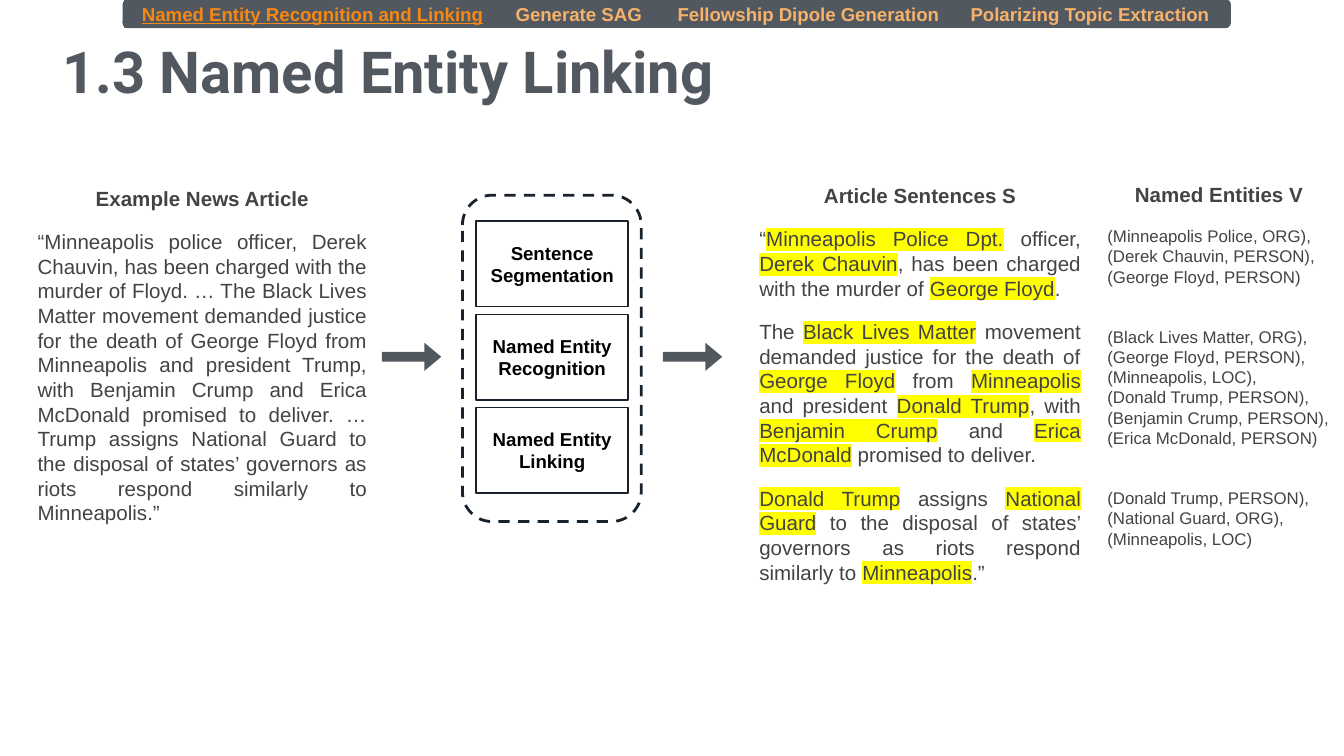
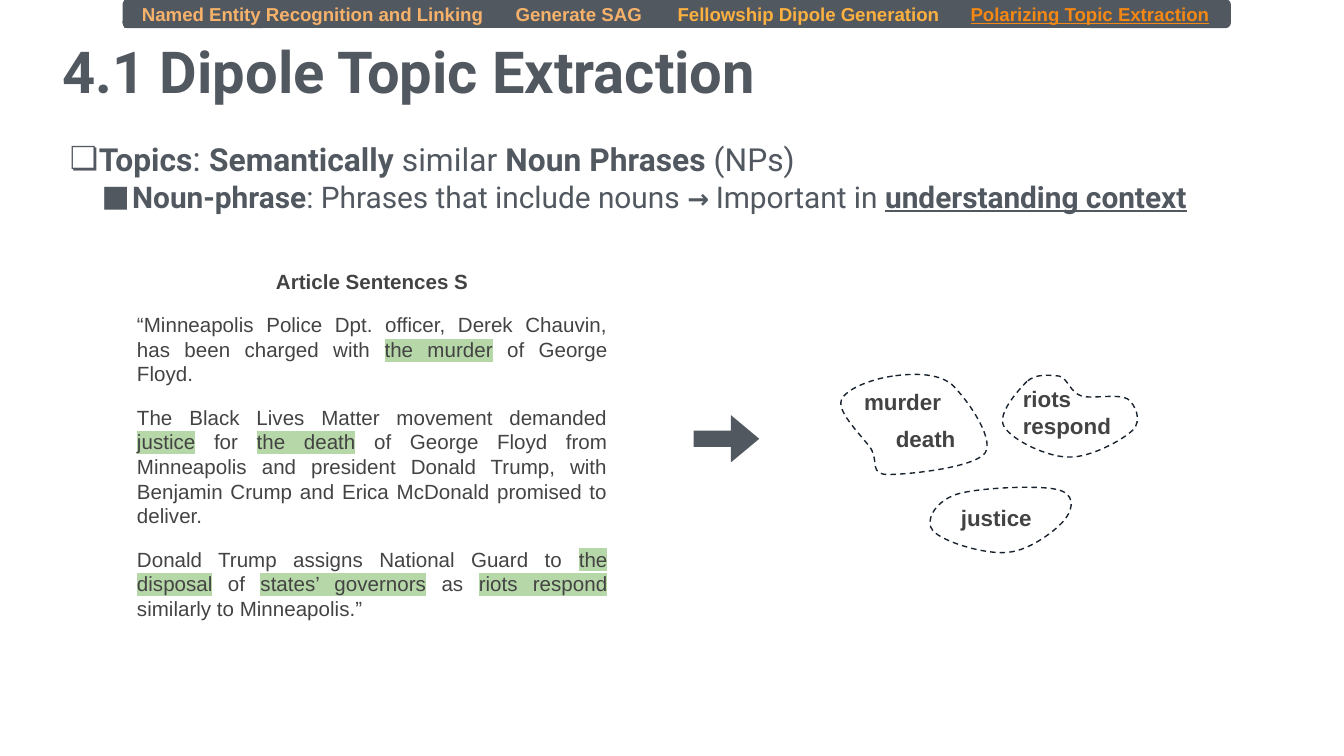
from dataclasses import dataclass
from typing import NamedTuple, Optional

from lxml.etree import SubElement
from pptx import Presentation
from pptx.dml.color import RGBColor
from pptx.enum.dml import MSO_LINE
from pptx.enum.shapes import MSO_SHAPE as Preset
from pptx.enum.text import MSO_ANCHOR as Anchor, PP_ALIGN as Align
from pptx.oxml.ns import qn
from pptx.util import Cm, Pt


@dataclass(frozen=True)
class Theme:
    slate: str = "525860"
    outline: str = "18222D"
    body: str = "434343"
    black: str = "000000"
    tab: str = "F6B26B"
    tab_done: str = "FCB040"
    tab_active: str = "F58813"
    entity_mark: str = "FFFF00"
    phrase_mark: str = "B6D7A8"
    title_font: str = "Roboto"
    text_font: str = "Arial"
    title_size: int = 31
    topic_size: int = 17
    phrase_size: int = 16
    word_size: int = 12
    text_size: int = 11
    label_size: int = 10
    entity_size: int = 9


THEME = Theme()


class Box(NamedTuple):
    """Left, top, width and height in centimetres."""
    left: float
    top: float
    width: float
    height: float

    def emu(self) -> tuple:
        return tuple(Cm(value) for value in self)


class Run(NamedTuple):
    text: str
    size: float = THEME.text_size
    color: str = THEME.body
    bold: bool = False
    underline: bool = False
    mark: Optional[str] = None
    font: str = THEME.text_font


class Bullet(NamedTuple):
    char: str
    margin: float
    hanging: float
    level: int


class Para(NamedTuple):
    runs: list
    align: Align = Align.LEFT
    before: float = 0
    after: float = 0
    bullet: Optional[Bullet] = None


class Word(NamedTuple):
    text: str
    box: Box


TABS = (
    ("Named Entity Recognition and Linking", 7.09),
    ("Generate SAG ", 3.07),
    ("Fellowship Dipole Generation", 5.51),
    ("Polarizing Topic Extraction", 5.13),
)
TABS_LEFT, TABS_HEIGHT = 2.36, 0.52
CAP_LEFTS, CAP_WIDTH = (20.53, 2.33), 2.72
INSET, TITLE_INSET = 0.25, 0.16

ARTICLE = (
    "“Minneapolis police officer, Derek Chauvin, has been charged with the murder of Floyd. "
    "… The Black Lives Matter movement demanded justice for the death of George Floyd from "
    "Minneapolis and president Trump, with Benjamin Crump and Erica McDonald promised to "
    "deliver. … Trump assigns National Guard to the disposal of states’ governors as riots "
    "respond similarly to Minneapolis.”"
)
# Bars enclose the highlighted words.
ENTITY_SENTENCES = (
    "“|Minneapolis Police Dpt.| officer, |Derek Chauvin|, has been charged with the murder "
    "of |George Floyd|. ",
    "The |Black Lives Matter| movement demanded justice for the death of |George Floyd| from "
    "|Minneapolis| and president |Donald Trump|, with |Benjamin Crump| and |Erica McDonald| "
    "promised to deliver. ",
    "|Donald Trump| assigns |National Guard| to the disposal of states’ governors as riots "
    "respond similarly to |Minneapolis|.”",
)
PHRASE_SENTENCES = (
    "“Minneapolis Police Dpt. officer, Derek Chauvin, has been charged with |the murder| of "
    "George Floyd. ",
    "The Black Lives Matter movement demanded |justice| for |the death| of George Floyd from "
    "Minneapolis and president Donald Trump, with Benjamin Crump and Erica McDonald promised "
    "to deliver. ",
    "Donald Trump assigns National Guard to |the disposal| of |states’ governors| as "
    "|riots respond| similarly to Minneapolis.”",
)
ENTITY_GROUPS = (
    ("(Minneapolis Police, ORG),", "(Derek Chauvin, PERSON),", "(George Floyd, PERSON)"),
    ("(Black Lives Matter, ORG),", "(George Floyd, PERSON),", "(Minneapolis, LOC),",
     "(Donald Trump, PERSON),", "(Benjamin Crump, PERSON),", "(Erica McDonald, PERSON)"),
    ("(Donald Trump, PERSON),", "(National Guard, ORG), (Minneapolis, LOC)"),
)
STEPS = ("Sentence Segmentation", "Named Entity Recognition", "Named Entity Linking")
FIRST_STEP, STEP_PITCH = Box(9, 4.18, 2.87, 1.62), 1.76

TOPIC_WORDS = (
    Word("murder", Box(16.08, 7.09, 1.96, 1.02)),
    Word("death", Box(16.68, 7.79, 1.96, 1.02)),
    Word("riots respond", Box(19.08, 7.03, 2.51, 1.55)),
    Word("justice", Box(17.91, 9.28, 2.51, 1.02)),
)
# Closed Bézier outlines in centimetres: every third point lies on the curve.
TOPIC_OUTLINES = (
    ((16.87, 7.11), (16.51, 7.16), (15.98, 7.34), (15.9, 7.57), (15.82, 7.8), (16.31, 8.26),
     (16.46, 8.48), (16.61, 8.74), (16.43, 8.97), (16.79, 8.97), (17.17, 8.97), (18.42, 8.84),
     (18.62, 8.56), (18.8, 8.28), (18.26, 7.52), (17.98, 7.26), (17.7, 7.04), (17.22, 7.06)),
    ((19.41, 7.21), (19.23, 7.39), (18.85, 7.82), (18.97, 8.05), (19.1, 8.31), (19.79, 8.64),
     (20.19, 8.64), (20.6, 8.66), (21.23, 8.31), (21.41, 8.13), (21.59, 7.95), (21.46, 7.65),
     (21.31, 7.54), (21.13, 7.44), (20.65, 7.54), (20.45, 7.49), (20.22, 7.42), (20.19, 7.16),
     (20.02, 7.11), (19.84, 7.09), (19.58, 7.06)),
    ((19.96, 9.25), (19.61, 9.17), (18.44, 9.22), (18.06, 9.35), (17.65, 9.5), (17.48, 9.86),
     (17.63, 10.03), (17.81, 10.24), (18.62, 10.49), (19.05, 10.44), (19.46, 10.41),
     (19.99, 10.01), (20.14, 9.8), (20.29, 9.6), (20.32, 9.32)),
)


def rgb(color: str) -> RGBColor:
    return RGBColor.from_string(color)


def add_run(paragraph, item: Run) -> None:
    run = paragraph.add_run()
    run.text = item.text
    font = run.font
    font.size, font.bold, font.name = Pt(item.size), item.bold, item.font
    font.color.rgb = rgb(item.color)
    if item.underline:
        font.underline = True
    if item.mark:
        properties = run._r.get_or_add_rPr()
        highlight = SubElement(properties, qn("a:highlight"))
        SubElement(highlight, qn("a:srgbClr"), val=item.mark)
        properties.find(qn("a:solidFill")).addnext(highlight)


def add_bullet(paragraph, bullet: Bullet) -> None:
    paragraph.level = bullet.level
    properties = paragraph._p.get_or_add_pPr()
    properties.set("marL", str(Cm(bullet.margin)))
    properties.set("indent", str(-Cm(bullet.hanging)))
    color = SubElement(properties, qn("a:buClr"))
    SubElement(color, qn("a:srgbClr"), val=THEME.slate)
    SubElement(properties, qn("a:buFont"), typeface=THEME.title_font)
    SubElement(properties, qn("a:buChar"), char=bullet.char)


def write(frame, paras: list, inset: float = INSET, anchor: Anchor = Anchor.TOP) -> None:
    frame.word_wrap = True
    frame.vertical_anchor = anchor
    frame.margin_left = frame.margin_right = Cm(inset)
    frame.margin_top = frame.margin_bottom = Cm(inset)
    for index, para in enumerate(paras):
        paragraph = frame.paragraphs[0] if index == 0 else frame.add_paragraph()
        paragraph.alignment = para.align
        paragraph.space_before, paragraph.space_after = Pt(para.before), Pt(para.after)
        if para.bullet:
            add_bullet(paragraph, para.bullet)
        for item in para.runs:
            add_run(paragraph, item)


def add_text(slide, box: Box, paras: list, inset: float = INSET) -> None:
    write(slide.shapes.add_textbox(*box.emu()).text_frame, paras, inset)


def style(shape, fill: Optional[str] = None, line: Optional[str] = None,
          width: float = 0.75, dashed: bool = False) -> None:
    shape.shadow.inherit = False
    if fill:
        shape.fill.solid()
        shape.fill.fore_color.rgb = rgb(fill)
    else:
        shape.fill.background()
    if line:
        shape.line.color.rgb = rgb(line)
        shape.line.width = Pt(width)
        if dashed:
            shape.line.dash_style = MSO_LINE.DASH
    else:
        shape.line.fill.background()


def add_label(slide, box: Box, run: Run, fill: Optional[str], line: str) -> None:
    shape = slide.shapes.add_shape(Preset.RECTANGLE, *box.emu())
    style(shape, fill, line)
    write(shape.text_frame, [Para([run], Align.CENTER)], anchor=Anchor.MIDDLE)


def add_arrow(slide, box: Box) -> None:
    arrow = slide.shapes.add_shape(Preset.RIGHT_ARROW, *box.emu())
    arrow.adjustments[0], arrow.adjustments[1] = 0.34, 0.6
    style(arrow, THEME.slate)


def add_outline(slide, points: tuple) -> None:
    """Draw a dashed closed curve, bending each straight side into its Bézier segment."""
    closed = [(Cm(x), Cm(y)) for x, y in points + points[:1]]
    builder = slide.shapes.build_freeform(*closed[0])
    builder.add_line_segments(closed[3::3], close=True)
    shape = builder.convert_to_shape()
    sides = list(shape._element.iter(qn("a:lnTo")))
    for index, side in enumerate(sides):
        curve = SubElement(side.getparent(), qn("a:cubicBezTo"))
        for x, y in closed[3 * index + 1:3 * index + 4]:
            SubElement(curve, qn("a:pt"), x=str(x - shape.left), y=str(y - shape.top))
        side.getparent().replace(side, curve)
    style(shape, line=THEME.outline, dashed=True)


def add_navigation(slide, colors: tuple) -> None:
    for left in CAP_LEFTS:
        cap_box = Box(left, 0, CAP_WIDTH, TABS_HEIGHT)
        cap = slide.shapes.add_shape(Preset.ROUNDED_RECTANGLE, *cap_box.emu())
        style(cap, THEME.slate, THEME.slate)
    left = TABS_LEFT
    for (text, width), color in zip(TABS, colors):
        run = Run(text, THEME.label_size, color, True, color == THEME.tab_active)
        add_label(slide, Box(left, 0, width, TABS_HEIGHT), run, THEME.slate, THEME.slate)
        left += width


def start_slide(deck, title: str, tab_colors: tuple):
    slide = deck.slides.add_slide(deck.slide_layouts[6])
    heading = Run(title, THEME.title_size, THEME.slate, True, font=THEME.title_font)
    add_text(slide, Box(1.02, 0.52, 22.83, 1.24), [Para([heading])], TITLE_INSET)
    add_navigation(slide, tab_colors)
    return slide


def column_heading(text: str) -> Para:
    return Para([Run(text, bold=True)], Align.CENTER)


def marked_sentences(sentences: tuple, mark: str) -> list:
    return [Para([Run(part, mark=mark if index % 2 else None)
                  for index, part in enumerate(sentence.split("|")) if part],
                 Align.JUSTIFY, before=10)
            for sentence in sentences]


def build_linking(deck) -> None:
    slide = start_slide(deck, "1.3 Named Entity Linking",
                        (THEME.tab_active, THEME.tab, THEME.tab, THEME.tab))
    add_text(slide, Box(0.46, 3.26, 6.73, 6.98), [
        column_heading("Example News Article"),
        Para([Run(ARTICLE)], Align.JUSTIFY, before=10, after=10)])
    add_text(slide, Box(14.1, 3.21, 6.58, 9.47), [
        column_heading("Article Sentences S"),
        *marked_sentences(ENTITY_SENTENCES, THEME.entity_mark)])
    for left in (7.22, 12.53):
        add_arrow(slide, Box(left, 6.48, 1.12, 0.53))

    pipeline = slide.shapes.add_shape(Preset.ROUNDED_RECTANGLE,
                                      *Box(8.74, 3.69, 3.38, 6.17).emu())
    style(pipeline, line=THEME.outline, width=1.5, dashed=True)
    for index, step in enumerate(STEPS):
        box = FIRST_STEP._replace(top=FIRST_STEP.top + index * STEP_PITCH)
        add_label(slide, box, Run(step, THEME.label_size, THEME.black, True),
                  None, THEME.outline)

    entities = [column_heading("Named Entities V")]
    for group_index, group in enumerate(ENTITY_GROUPS):
        for index, entity in enumerate(group):
            gap = 0 if index else (21.5 if group_index else 10)
            entities.append(Para([Run(entity, THEME.entity_size)], before=gap))
    add_text(slide, Box(20.68, 3.2, 4.72, 8.92), entities)


def build_topics(deck) -> None:
    slide = start_slide(deck, "4.1 Dipole Topic Extraction",
                        (THEME.tab, THEME.tab, THEME.tab_done, THEME.tab_active))

    def slate_run(text: str, size: float, bold: bool = False, underline: bool = False) -> Run:
        return Run(text, size, THEME.slate, bold, underline, font=THEME.title_font)

    topic, phrase = THEME.topic_size, THEME.phrase_size
    add_text(slide, Box(0.76, 2.45, 24.46, 1.96), [
        Para([slate_run("Topics", topic, True), slate_run(": ", topic + 1),
              slate_run("Semantically ", topic, True), slate_run("similar ", topic),
              slate_run("Noun Phrases", topic, True), slate_run(" (NPs)", topic)],
             bullet=Bullet("❏", 0.95, 0.55, 0)),
        Para([slate_run("Noun-phrase", phrase, True),
              slate_run(": Phrases that include nouns ", phrase),
              slate_run("→ ", phrase - 2, True), slate_run("Important in ", phrase),
              slate_run("understanding context", phrase, True, True)],
             bullet=Bullet("■", 1.58, 0.58, 1))], TITLE_INSET)
    add_text(slide, Box(2.34, 4.83, 9.39, 8.05), [
        column_heading("Article Sentences S"),
        *marked_sentences(PHRASE_SENTENCES, THEME.phrase_mark)])
    for word in TOPIC_WORDS:
        run = Run(word.text, THEME.word_size, bold=True)
        add_text(slide, word.box, [Para([run], Align.JUSTIFY, after=10)])
    for outline in TOPIC_OUTLINES:
        add_outline(slide, outline)
    add_arrow(slide, Box(13.11, 7.85, 1.24, 0.89))


def main() -> None:
    deck = Presentation()
    deck.slide_width, deck.slide_height = Cm(25.4), Cm(14.29)
    build_linking(deck)
    build_topics(deck)
    deck.save("out.pptx")


if __name__ == "__main__":
    main()
